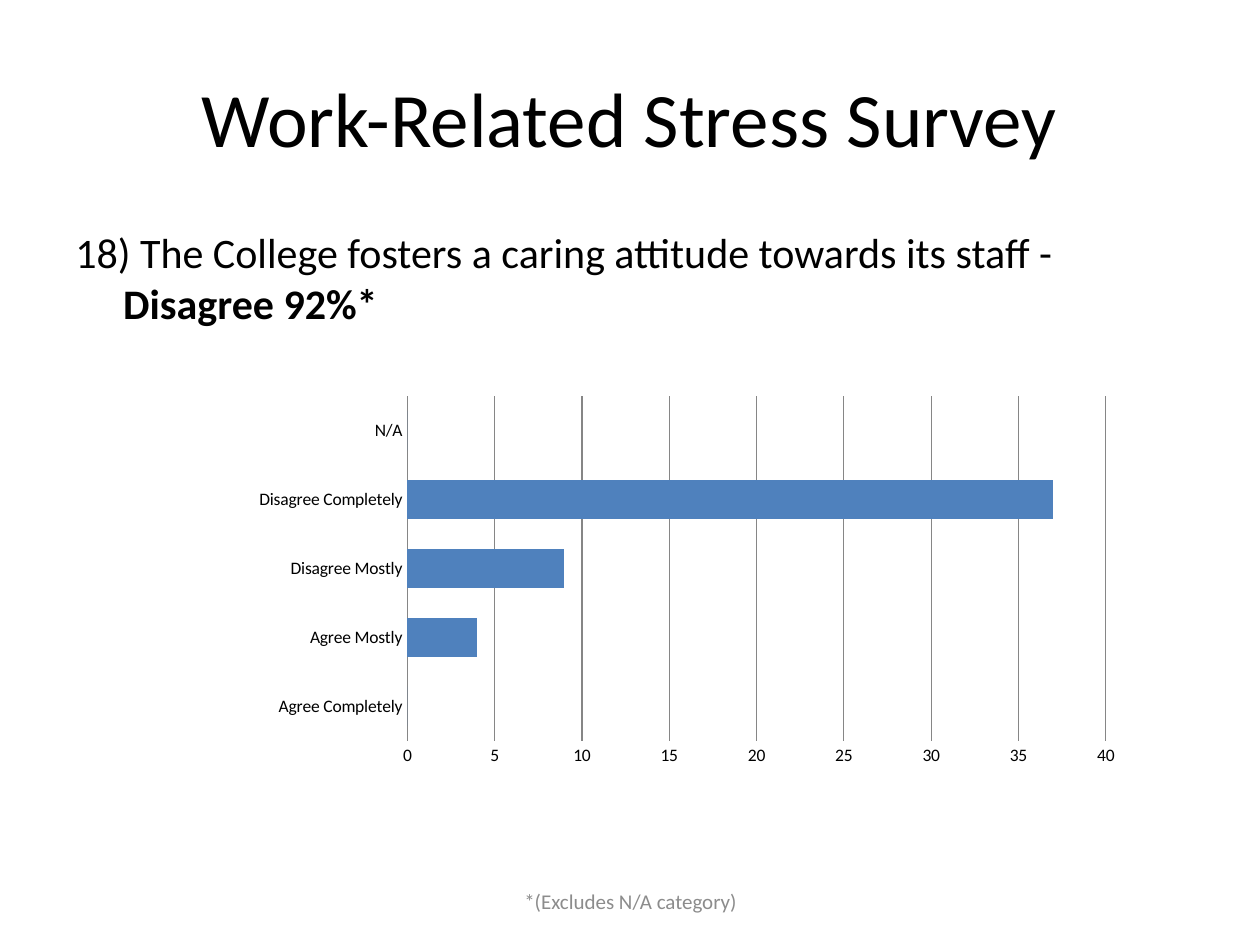
from dataclasses import dataclass

from lxml import etree
from pptx import Presentation
from pptx.chart.data import CategoryChartData
from pptx.dml.color import RGBColor
from pptx.enum.chart import XL_CHART_TYPE, XL_TICK_MARK
from pptx.enum.text import MSO_ANCHOR, PP_ALIGN
from pptx.util import Inches, Pt

BAR_CLUSTERED = XL_CHART_TYPE.BAR_CLUSTERED
NO_TICK = XL_TICK_MARK.NONE
MIDDLE, TOP = MSO_ANCHOR.MIDDLE, MSO_ANCHOR.TOP
CENTER, LEFT = PP_ALIGN.CENTER, PP_ALIGN.LEFT
CHART_NAMESPACE = "http://schemas.openxmlformats.org/drawingml/2006/chart"


@dataclass(frozen=True)
class Theme:
    font: str = "Calibri"
    text: RGBColor = RGBColor(0x00, 0x00, 0x00)
    muted: RGBColor = RGBColor(0x8C, 0x8C, 0x8C)
    bar: RGBColor = RGBColor(0x4F, 0x81, 0xBD)
    grid: RGBColor = RGBColor(0x86, 0x86, 0x86)
    title_size: int = 44
    body_size: int = 24
    note_size: int = 12
    chart_size: int = 10


THEME = Theme()

RESPONSES = {
    "Agree Completely": 0,
    "Agree Mostly": 4,
    "Disagree Mostly": 9,
    "Disagree Completely": 37,
    "N/A": 0,
}


def apply_format(target, values):
    for name, value in values.items():
        setattr(target, name, value)


def style_font(font, size, color, bold=False):
    apply_format(font, {"name": THEME.font, "size": Pt(size), "bold": bold})
    font.color.rgb = color


def add_text(slide, box, runs, size, color=THEME.text, align=CENTER, anchor=MIDDLE):
    """Add one paragraph made of (text, bold) runs and return it."""
    frame = slide.shapes.add_textbox(*map(Inches, box)).text_frame
    apply_format(frame, {"word_wrap": True, "vertical_anchor": anchor})
    paragraph = frame.paragraphs[0]
    paragraph.alignment = align
    for text, bold in runs:
        run = paragraph.add_run()
        run.text = text
        style_font(run.font, size, color, bold)
    return paragraph


def set_hanging_indent(paragraph, inches):
    properties = paragraph._p.get_or_add_pPr()
    properties.set("marL", str(Inches(inches)))
    properties.set("indent", str(Inches(-inches)))


def set_plot_layout(chart, **fractions):
    """Fix the inner plot area as fractions of the chart frame."""
    plot_area = chart._chartSpace.chart.plotArea
    for existing in plot_area.findall(f"{{{CHART_NAMESPACE}}}layout"):
        plot_area.remove(existing)
    layout = etree.Element(f"{{{CHART_NAMESPACE}}}layout")
    manual = etree.SubElement(layout, f"{{{CHART_NAMESPACE}}}manualLayout")
    settings = {"layoutTarget": "inner", "xMode": "edge", "yMode": "edge", **fractions}
    for tag, value in settings.items():
        etree.SubElement(manual, f"{{{CHART_NAMESPACE}}}{tag}", val=str(value))
    plot_area.insert(0, layout)


def add_response_chart(slide, box):
    data = CategoryChartData()
    data.categories = list(RESPONSES)
    data.add_series("Series 1", list(RESPONSES.values()))
    chart = slide.shapes.add_chart(BAR_CLUSTERED, *map(Inches, box), data).chart
    apply_format(chart, {"has_legend": False, "has_title": False})
    style_font(chart.font, THEME.chart_size, THEME.text)

    plot = chart.plots[0]
    apply_format(plot, {"gap_width": 75, "overlap": -25, "vary_by_categories": False})
    fill = plot.series[0].format.fill
    fill.solid()
    fill.fore_color.rgb = THEME.bar

    category_axis, value_axis = chart.category_axis, chart.value_axis
    for axis in (category_axis, value_axis):
        apply_format(axis, {"major_tick_mark": NO_TICK, "minor_tick_mark": NO_TICK})
    apply_format(value_axis, {
        "minimum_scale": 0, "maximum_scale": 40, "major_unit": 5,
        "has_major_gridlines": True,
    })
    value_axis.format.line.fill.background()
    for line in (category_axis.format.line, value_axis.major_gridlines.format.line):
        line.color.rgb = THEME.grid
        line.width = Pt(0.75)
    set_plot_layout(chart, x=0.282, y=0.027, w=0.682, h=0.761)


def main():
    presentation = Presentation()
    apply_format(presentation, {"slide_width": Inches(10), "slide_height": Inches(7.5)})
    slide = presentation.slides.add_slide(presentation.slide_layouts[6])

    add_text(slide, (0.5, 0.3, 9, 1.25), [("Work-Related Stress Survey", False)],
             THEME.title_size)
    question = add_text(
        slide, (0.5, 1.75, 9, 4.95),
        [("18) The College fosters a caring attitude towards its staff - ", False),
         ("Disagree 92%*", True)],
        THEME.body_size, align=LEFT, anchor=TOP)
    question.space_before = Pt(0.2 * THEME.body_size)
    set_hanging_indent(question, 0.38)
    add_response_chart(slide, (0.94, 3.05, 8.13, 3.59))
    add_text(slide, (3.42, 6.95, 3.17, 0.4), [("*(Excludes N/A category)", False)],
             THEME.note_size, THEME.muted)

    presentation.save("out.pptx")


if __name__ == "__main__":
    main()
